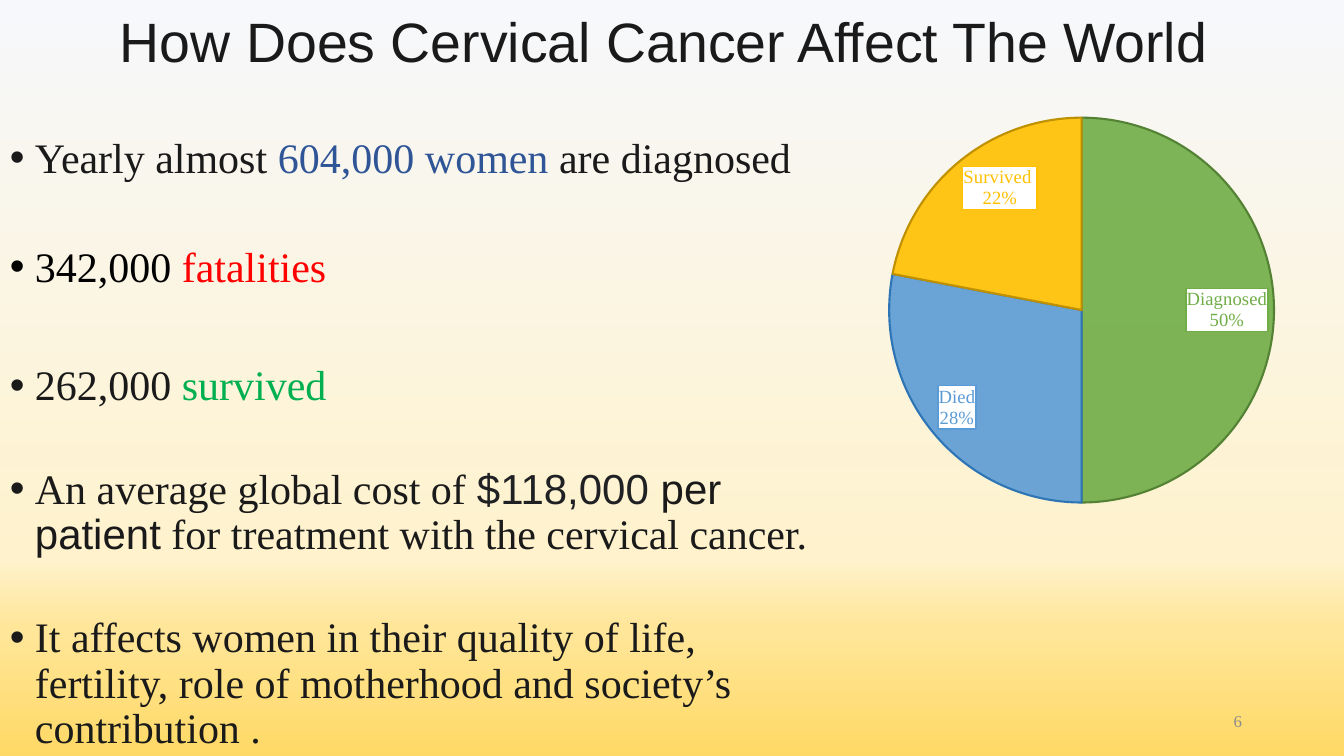
from pptx import Presentation
from pptx.chart.data import CategoryChartData
from pptx.dml.color import RGBColor
from pptx.enum.chart import XL_CHART_TYPE, XL_LABEL_POSITION
from pptx.enum.text import MSO_ANCHOR, PP_ALIGN
from pptx.oxml import parse_xml
from pptx.oxml.ns import nsdecls, qn
from pptx.util import Emu, Pt
from lxml.etree import SubElement

PX = 914400 / 100.8

THEME = {
    "sans": "Arial", "serif": "Times New Roman",
    "title": 39.6, "body": 30, "label": 13.3, "number": 12,
    "ink": "1A1A1A", "black": "000000", "dark": "202124", "grey": "8C8C8C",
    "blue": "2F5597", "red": "FF0000", "green": "00B050", "white": "FFFFFF",
    "sky": [(0, "F6F8FC"), (74, "FFF2CC"), (83, "FFE699"), (100, "FFD966")],
}

TITLE = "How Does Cervical Cancer Affect The World"
PAGE = "6"
FACTS = [
    (0, [("Yearly almost ", "ink", "serif"), ("604,000 women ", "blue", "serif"),
         ("are diagnosed", "ink", "serif")]),
    (64, [("342,000 ", "black", "serif"), ("fatalities", "red", "serif")]),
    (73, [("262,000 ", "ink", "serif"), ("survived", "green", "serif")]),
    (58, [("An average global cost of ", "ink", "serif"), ("$118,000 ", "dark", "sans"),
          ("per patient", "ink", "sans"),
          (" for treatment with the cervical cancer.", "ink", "serif")]),
    (58, [("It affects women in their quality of life, fertility, role of motherhood "
           "and society’s contribution .", "ink", "serif")]),
]
OUTCOMES = [
    ("Diagnosed", 50, "70AD47", "548235"),
    ("Died", 28, "5B9BD5", "2E75B6"),
    ("Survived ", 22, "FFC000", "BF9000"),
]

BOXES = {
    "title": (110, 12, 1141, 66),
    "facts": (0, 132, 840, 624),
    "outcomes": (751, 38, 708, 466),
    "page": (950, 701, 302, 40),
}
PIE_AREA = {"x": 0.044, "y": 0.171, "w": 0.846, "h": 0.826}
HANG = 25


def px(length):
    return Emu(round(length * PX))


def place(name):
    return [px(length) for length in BOXES[name]]


def apply(target, values):
    for key, value in values.items():
        setattr(target, key, value)


def write(paragraph, words, size, colour, face):
    run = paragraph.add_run()
    run.text = words
    apply(run.font, {"size": Pt(THEME[size]), "name": THEME[face]})
    run.font.color.rgb = RGBColor.from_string(THEME[colour])


def text_frame(slide, name, anchor):
    frame = slide.shapes.add_textbox(*place(name)).text_frame
    apply(frame, {"word_wrap": True, "vertical_anchor": anchor})
    return frame


def paint_background(slide):
    fill = slide.background.fill
    fill.gradient()
    fill.gradient_angle = 270
    stops = slide.element.find(".//" + qn("a:gsLst"))
    for stop in list(stops):
        stops.remove(stop)
    for position, colour in THEME["sky"]:
        stop = SubElement(stops, qn("a:gs"), pos=str(position * 1000))
        SubElement(stop, qn("a:srgbClr"), val=colour)


def add_title(slide):
    paragraph = text_frame(slide, "title", MSO_ANCHOR.MIDDLE).paragraphs[0]
    paragraph.line_spacing = 0.9
    write(paragraph, TITLE, "title", "ink", "sans")


def add_facts(slide):
    frame = text_frame(slide, "facts", MSO_ANCHOR.TOP)
    for index, (gap, pieces) in enumerate(FACTS):
        paragraph = frame.add_paragraph() if index else frame.paragraphs[0]
        apply(paragraph, {"line_spacing": 0.9, "space_before": px(gap)})
        properties = paragraph._p.get_or_add_pPr()
        properties.set("marL", str(px(HANG)))
        properties.set("indent", str(-px(HANG)))
        SubElement(properties, qn("a:buFont"), typeface=THEME["sans"])
        SubElement(properties, qn("a:buChar"), char="•")
        for words, colour, face in pieces:
            write(paragraph, words, "body", colour, face)


def clear_fill():
    return parse_xml(f'<c:spPr {nsdecls("c", "a")}><a:noFill/><a:ln><a:noFill/></a:ln></c:spPr>')


def style_label(point, colour):
    label = point.data_label
    apply(label.font, {"size": Pt(THEME["label"]), "name": THEME["serif"]})
    label.font.color.rgb = RGBColor.from_string(colour)
    label.position = XL_LABEL_POSITION.INSIDE_END
    node = label._get_or_add_dLbl()
    for tag, shown in {"showVal": "0", "showCatName": "1", "showPercent": "1"}.items():
        node.find(qn("c:" + tag)).set("val", shown)
    SubElement(node, qn("c:separator")).text = "\n"
    text = node.find(qn("c:txPr"))
    text.addprevious(parse_xml(f'<c:numFmt {nsdecls("c")} formatCode="0%" sourceLinked="0"/>'))
    text.addprevious(parse_xml(
        f'<c:spPr {nsdecls("c", "a")}><a:solidFill><a:srgbClr val="{THEME["white"]}"/></a:solidFill>'
        f'<a:ln w="12700"><a:solidFill><a:srgbClr val="{colour}"/></a:solidFill>'
        f'<a:prstDash val="solid"/><a:round/></a:ln></c:spPr>'))


def add_outcomes(slide):
    data = CategoryChartData()
    data.categories = [outcome[0] for outcome in OUTCOMES]
    data.add_series("Series 1", [outcome[1] for outcome in OUTCOMES])
    chart = slide.shapes.add_chart(XL_CHART_TYPE.PIE, *place("outcomes"), data).chart
    apply(chart, {"has_legend": False, "has_title": False})
    apply(chart.font, {"size": Pt(10), "name": THEME["serif"]})
    chart.plots[0].vary_by_categories = True
    for index, (_, _, colour, edge) in enumerate(OUTCOMES):
        point = chart.plots[0].series[0].points[index]
        point.format.fill.solid()
        point.format.fill.fore_color.rgb = RGBColor.from_string(colour)
        solid = point.format._element.find(".//" + qn("a:srgbClr"))
        SubElement(solid, qn("a:alpha"), val="90000")
        point.format.line.color.rgb = RGBColor.from_string(edge)
        point.format.line.width = Pt(1.5)
        style_label(point, colour)
    chart.element.find(qn("c:txPr")).addprevious(clear_fill())
    area = chart.element.find(".//" + qn("c:plotArea"))
    for layout in area.findall(qn("c:layout")):
        area.remove(layout)
    sizes = "".join(f'<c:{key} val="{value}"/>' for key, value in PIE_AREA.items())
    area.insert(0, parse_xml(
        f'<c:layout {nsdecls("c")}><c:manualLayout><c:layoutTarget val="inner"/>'
        f'<c:xMode val="edge"/><c:yMode val="edge"/>{sizes}</c:manualLayout></c:layout>'))
    area.append(clear_fill())


def add_page(slide):
    paragraph = text_frame(slide, "page", MSO_ANCHOR.MIDDLE).paragraphs[0]
    paragraph.alignment = PP_ALIGN.RIGHT
    write(paragraph, PAGE, "number", "grey", "serif")


def main():
    deck = Presentation()
    apply(deck, {"slide_width": px(1344), "slide_height": px(756)})
    slide = deck.slides.add_slide(deck.slide_layouts[6])
    for build in (paint_background, add_title, add_facts, add_outcomes, add_page):
        build(slide)
    deck.save("out.pptx")


if __name__ == "__main__":
    main()
